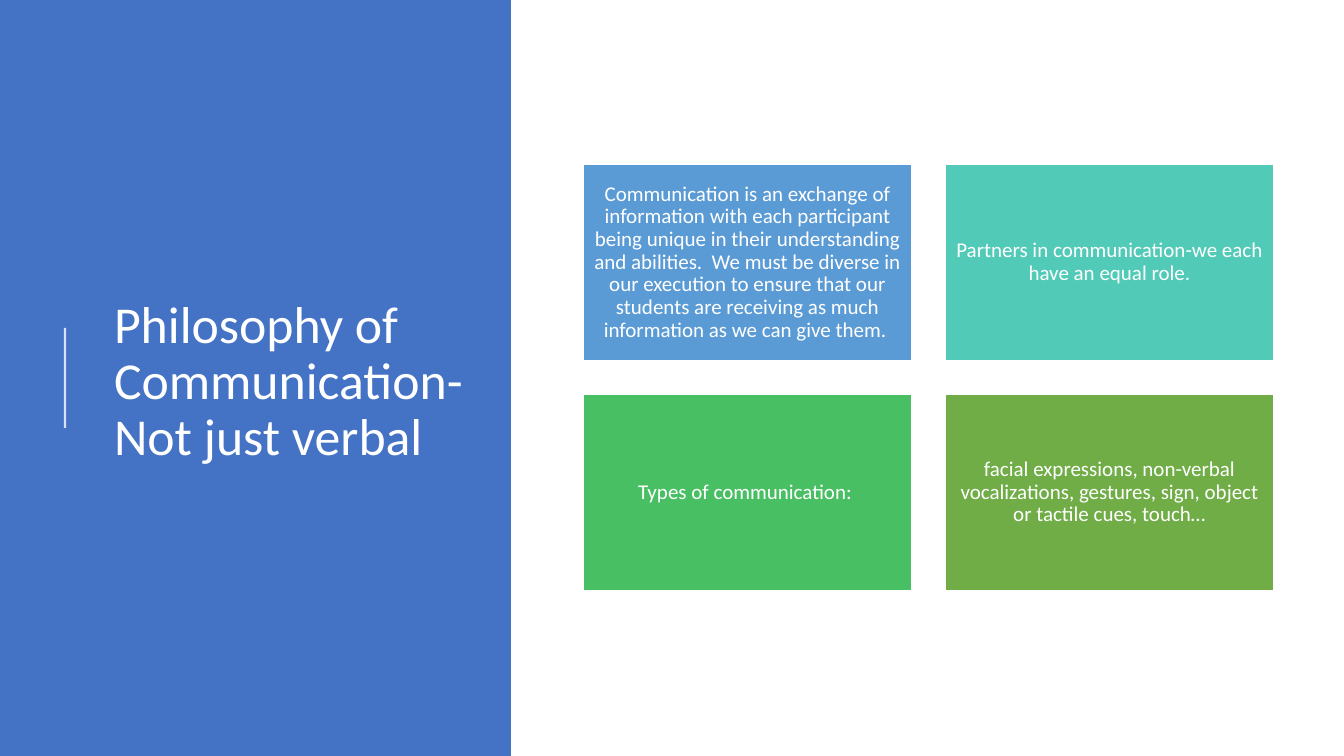
from lxml.etree import SubElement
from pptx import Presentation
from pptx.dml.color import RGBColor
from pptx.enum.shapes import MSO_CONNECTOR, MSO_SHAPE
from pptx.enum.text import MSO_ANCHOR, MSO_AUTO_SIZE, PP_ALIGN
from pptx.oxml.ns import qn
from pptx.util import Pt

TITLE = "Philosophy of Communication-Not just verbal"
CARDS = [
    ("Communication is an exchange of information with each participant "
     "being unique in their understanding and abilities.  We must be diverse "
     "in our execution to ensure that our students are receiving as much "
     "information as we can give them. ", "sky"),
    ("Partners in communication-we each have an equal role.", "teal"),
    ("Types of communication: ", "green"),
    ("facial expressions, non-verbal vocalizations, gestures, sign, object "
     "or tactile cues, touch…", "olive"),
]
COLORS = {"white": "FFFFFF", "panel": "4472C4", "sky": "5B9BD5",
          "teal": "52CAB8", "green": "49BF64", "olive": "70AD47"}
FONT = "Calibri"
WIDE, HIGH = 1344, 756
LEFT, TOP = 583, 164
CARD_W, CARD_H = 329, 197
STEP_X, STEP_Y = 362, 230


def px(n):
    return round(n * 914400 / 100.8)


def color(name):
    return RGBColor.from_string(COLORS[name])


def write(shape, text, size, align, inset):
    frame = shape.text_frame
    frame.text = text
    frame.word_wrap = True
    frame.auto_size = MSO_AUTO_SIZE.NONE
    frame.vertical_anchor = MSO_ANCHOR.MIDDLE
    frame.margin_left = frame.margin_right = px(inset)
    frame.margin_top = frame.margin_bottom = px(inset)
    para = frame.paragraphs[0]
    para.alignment = align
    para.line_spacing = 0.9
    font = para.runs[0].font
    font.name, font.size = FONT, Pt(size)
    font.color.rgb = color("white")


def block(slide, x, y, w, h, fill):
    shape = slide.shapes.add_shape(MSO_SHAPE.RECTANGLE, px(x), px(y), px(w), px(h))
    shape.shadow.inherit = False
    shape.fill.solid()
    shape.fill.fore_color.rgb = color(fill)
    shape.line.fill.background()
    return shape


def add_rule(slide):
    rule = slide.shapes.add_connector(
        MSO_CONNECTOR.STRAIGHT, px(65), px(428), px(65), px(328))
    rule.line.color.rgb = color("white")
    rule.line.width = Pt(1.5)
    props = rule.line._ln.getparent()
    tint = props.find(".//" + qn("a:srgbClr"))
    SubElement(tint, qn("a:alpha"), val="80000")
    SubElement(props, qn("a:effectLst"))


def main():
    deck = Presentation()
    deck.slide_width, deck.slide_height = px(WIDE), px(HIGH)
    slide = deck.slides.add_slide(deck.slide_layouts[5])

    panel = block(slide, 0, 0, 511, HIGH, "panel")
    title = slide.shapes.title
    title.left, title.top = px(104), px(79)
    title.width, title.height = px(372), px(607)
    write(title, TITLE, 37, PP_ALIGN.LEFT, 10)
    title._element.addprevious(panel._element)
    add_rule(slide)

    for i, (text, fill) in enumerate(CARDS):
        row, col = divmod(i, 2)
        card = block(slide, LEFT + col * STEP_X, TOP + row * STEP_Y,
                     CARD_W, CARD_H, fill)
        card.line.color.rgb = color("white")
        card.line.width = Pt(1)
        write(card, text, 15, PP_ALIGN.CENTER, 6)

    deck.save("out.pptx")


if __name__ == "__main__":
    main()
